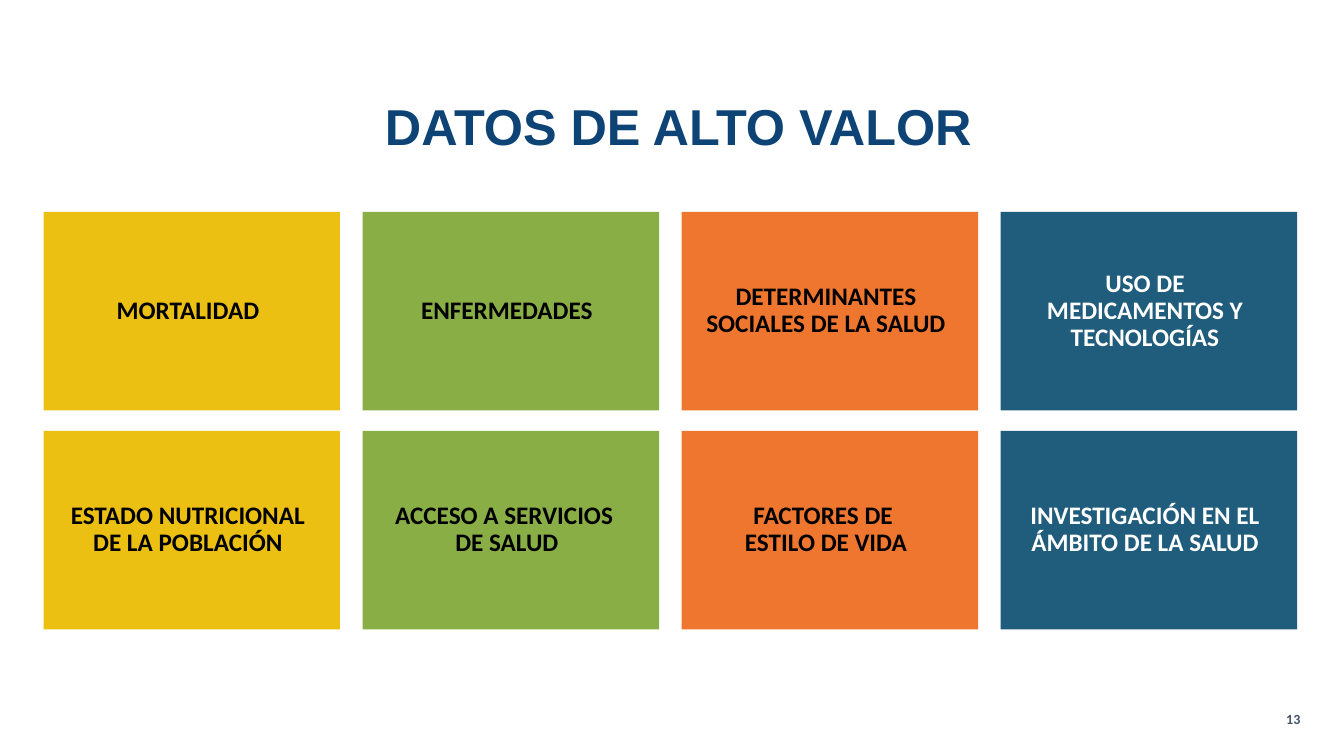
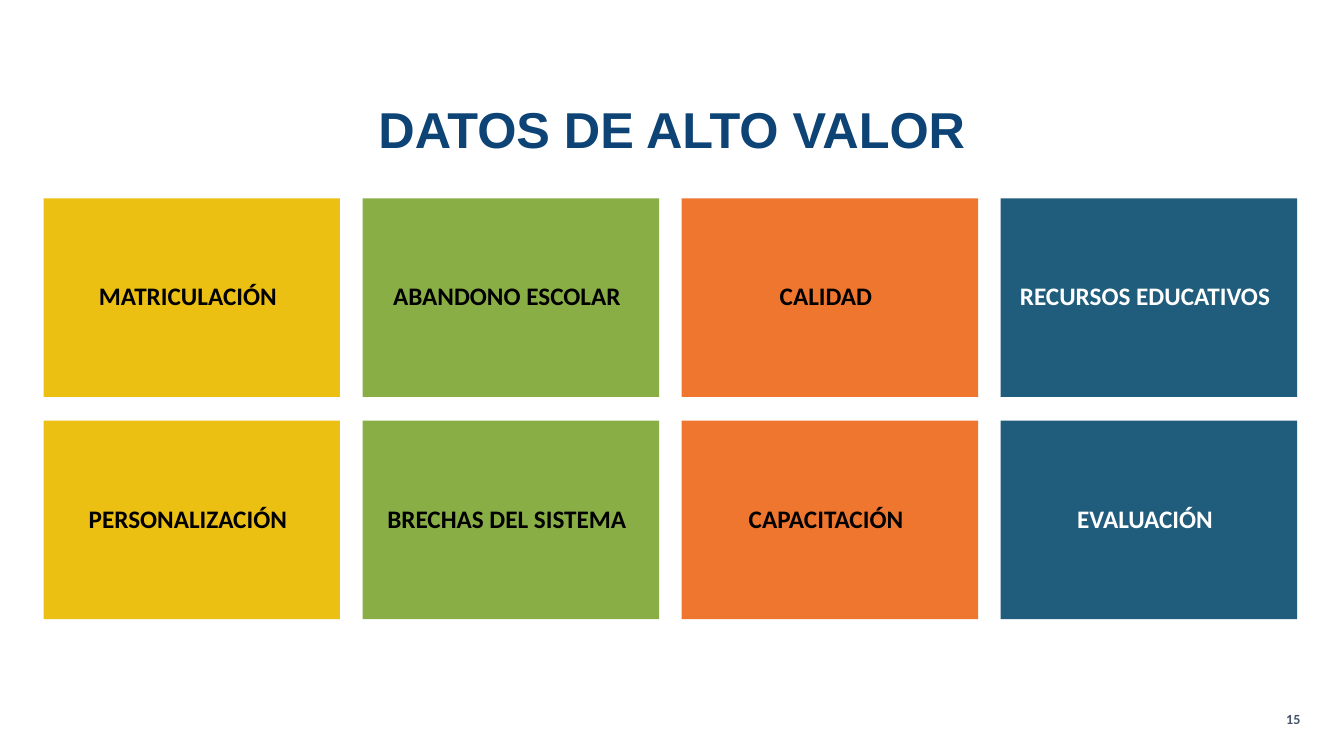
import pptx
import pptx.util
from pptx.dml.color import RGBColor
from pptx.enum.shapes import MSO_SHAPE
from pptx.enum.text import MSO_ANCHOR, PP_ALIGN
from pptx.util import Cm

NAVY = RGBColor(0x0D, 0x43, 0x75)
SLATE = RGBColor(0x44, 0x54, 0x6A)
YELLOW = RGBColor(0xEB, 0xC0, 0x12)
GREEN = RGBColor(0x8A, 0xAE, 0x46)
ORANGE = RGBColor(0xEF, 0x76, 0x2F)
TEAL = RGBColor(0x20, 0x5C, 0x7B)
BLACK = RGBColor(0x00, 0x00, 0x00)
WHITE = RGBColor(0xFF, 0xFF, 0xFF)

COLUMNS = [(YELLOW, BLACK), (GREEN, BLACK), (ORANGE, BLACK), (TEAL, WHITE)]
CARD_LEFT, CARD_PITCH = 1.1, 8.04
CARD_WIDTH, CARD_HEIGHT = 7.47, 5.0

SLIDES = [
    {
        "number": "13",
        "title_place": (1.3, 2.44, 31.6, 1.6),
        "rows": [
            (5.34, ["MORTALIDAD", "ENFERMEDADES",
                    "DETERMINANTES SOCIALES DE LA SALUD",
                    "USO DE MEDICAMENTOS Y TECNOLOGÍAS"]),
            (10.86, ["ESTADO NUTRICIONAL DE LA POBLACIÓN",
                     "ACCESO A SERVICIOS \vDE SALUD",
                     "FACTORES DE \vESTILO DE VIDA",
                     "INVESTIGACIÓN EN EL ÁMBITO DE LA SALUD"]),
        ],
    },
    {
        "number": "15",
        "title_place": (0, 2.51, 33.87, 1.83),
        "rows": [
            (5.0, ["MATRICULACIÓN", "ABANDONO ESCOLAR", "CALIDAD",
                   "RECURSOS EDUCATIVOS"]),
            (10.6, ["PERSONALIZACIÓN", "BRECHAS DEL SISTEMA", "CAPACITACIÓN",
                    "EVALUACIÓN"]),
        ],
    },
]


def write(box, text, *, size, color, font="Calibri", align=PP_ALIGN.CENTER,
          anchor=MSO_ANCHOR.TOP, line_spacing=0.9, space_before=0):
    """Fill a box with one bold paragraph; a vertical tab breaks the line."""
    frame = box.text_frame
    frame.word_wrap = True
    frame.vertical_anchor = anchor
    para = frame.paragraphs[0]
    para.text = text
    para.alignment = align
    para.line_spacing = line_spacing
    para.space_before = pptx.util.Pt(space_before)
    for span in para.runs:
        span.font.name = font
        span.font.size = pptx.util.Pt(size)
        span.font.bold = True
        span.font.color.rgb = color


deck = pptx.Presentation()
deck.slide_width = Cm(33.87)
deck.slide_height = Cm(19.05)

for content in SLIDES:
    page = deck.slides.add_slide(deck.slide_layouts[6])

    title = page.shapes.add_textbox(*map(Cm, content["title_place"]))
    write(title, "DATOS DE ALTO VALOR", size=36, color=NAVY, font="Arial")

    for top, labels in content["rows"]:
        for column, (label, (fill, ink)) in enumerate(zip(labels, COLUMNS)):
            card = page.shapes.add_shape(
                MSO_SHAPE.RECTANGLE, Cm(CARD_LEFT + column * CARD_PITCH), Cm(top),
                Cm(CARD_WIDTH), Cm(CARD_HEIGHT))
            card.shadow.inherit = False
            card.fill.solid()
            card.fill.fore_color.rgb = fill
            card.line.fill.background()
            frame = card.text_frame
            frame.margin_left = Cm(0.41)
            frame.margin_top = frame.margin_right = frame.margin_bottom = Cm(0.61)
            write(card, label, size=18, color=ink, anchor=MSO_ANCHOR.MIDDLE,
                  space_before=10)

    number = page.shapes.add_textbox(Cm(31.78), Cm(17.78), Cm(1.24), Cm(0.69))
    write(number, content["number"], size=10, color=SLATE,
          align=PP_ALIGN.RIGHT, line_spacing=1.0)

deck.save("out.pptx")
